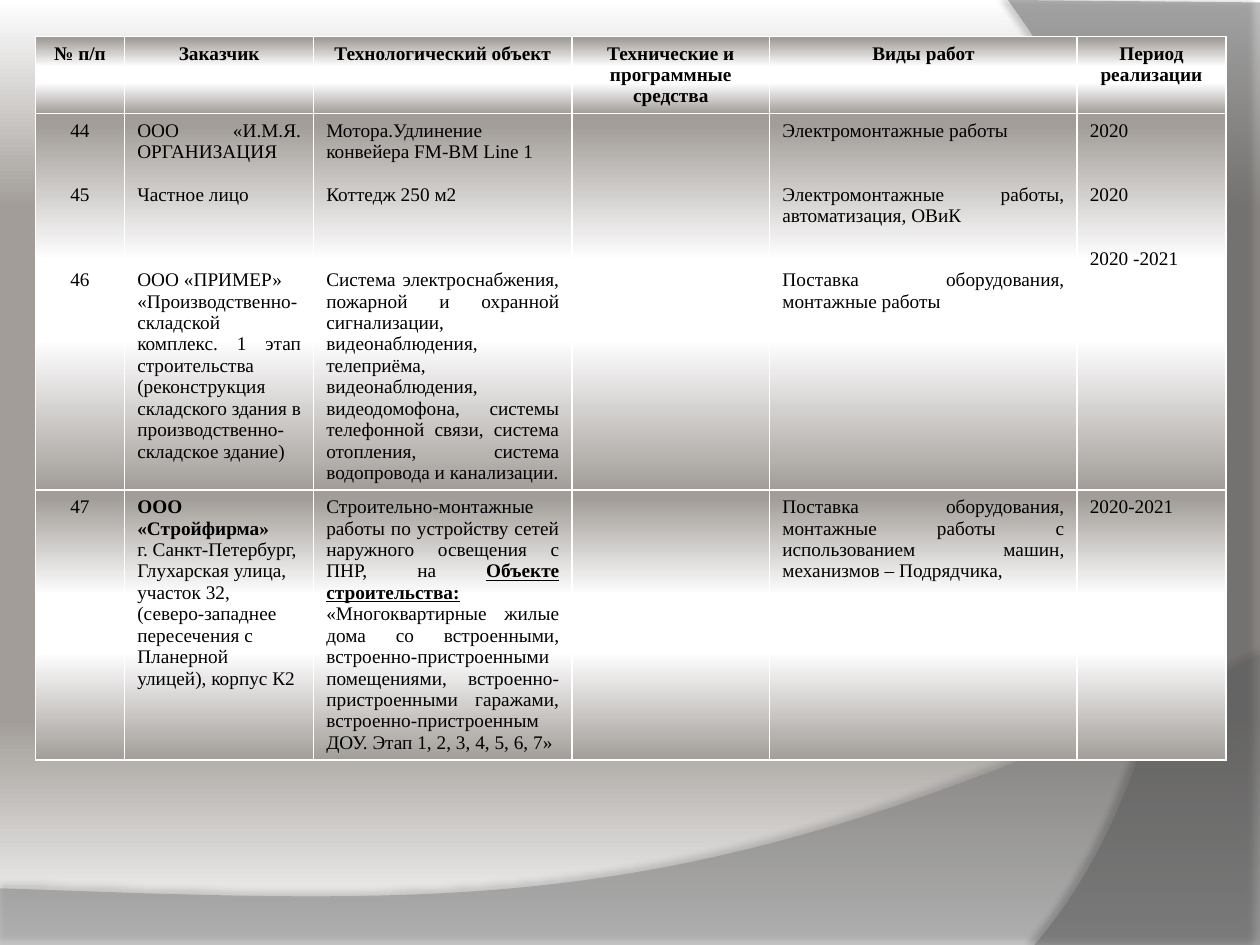
import pptx
import pptx.dml.color
import pptx.enum.text
import pptx.oxml
import pptx.oxml.ns
import pptx.util
from pptx.util import Inches

COLORS = {"white": "FFFFFF", "stone": "A29D99", "text": "000000",
          "wave": "7F7F7F", "side": "5E5E5E", "shadow": "000000"}
FONT = "Times New Roman"
TEXT_SIZE = 11
LINE_HEIGHT = 12.2
CENTER = pptx.enum.text.PP_ALIGN.CENTER
JUSTIFY = pptx.enum.text.PP_ALIGN.JUSTIFY
LEFT = pptx.enum.text.PP_ALIGN.LEFT

BACKGROUND_STOPS = [(0, "white"), (22, "stone"), (76, "stone"), (100, "white")]
CELL_STOPS = [(3, "stone"), (39, "white"), (60, "white"), (100, "stone")]

COLUMNS = [0.71, 1.5, 2.05, 1.57, 2.44, 1.18]
ROWS = [0.57, 2.96, 1.56]
HEADERS = ["№ п/п", "Заказчик", "Технологический объект",
           "Технические и программные средства", "Виды работ", "Период реализации"]

# Each cell is a list of paragraphs: (lines of space above, runs as (text, style)).
PROJECTS_44_46 = [
    [(0, [("44", "")]), (2, [("45", "")]), (3, [("46", "")])],
    [(0, [("ООО «И.М.Я. ОРГАНИЗАЦИЯ", "")]),
     (1, [("Частное лицо", "")]),
     (3, [("ООО «ПРИМЕР»", "")]),
     (0, [("«Производственно-складской комплекс. 1 этап строительства (реконструкция "
           "складского здания в производственно-складское здание)", "")])],
    [(0, [("Мотора.Удлинение конвейера FM-BM Line 1", "")]),
     (1, [("Коттедж 250 м2", "")]),
     (3, [("Система электроснабжения, пожарной и охранной сигнализации, видеонаблюдения, "
           "телеприёма, видеонаблюдения, видеодомофона, системы телефонной связи, система "
           "отопления, система водопровода и канализации.", "")])],
    [],
    [(0, [("Электромонтажные работы", "")]),
     (2, [("Электромонтажные работы, автоматизация, ОВиК", "")]),
     (2, [("Поставка оборудования, монтажные работы", "")])],
    [(0, [("2020", "")]), (2, [("2020", "")]), (2, [("2020 -2021", "")])],
]
PROJECT_47 = [
    [(0, [("47", "")])],
    [(0, [("ООО «Стройфирма»", "b")]),
     (0, [("г. Санкт-Петербург, Глухарская улица, участок 32, (северо-западнее "
           "пересечения с Планерной улицей), корпус К2", "")])],
    [(0, [("Строительно-монтажные работы по устройству сетей наружного освещения с ПНР, на ", ""),
          ("Объекте строительства:", "bu"),
          (" «Многоквартирные жилые дома со встроенными, встроенно-пристроенными "
           "помещениями, встроенно-пристроенными гаражами, встроенно-пристроенным ДОУ. "
           "Этап 1, 2, 3, 4, 5, 6, 7»", "")])],
    [],
    [(0, [("Поставка оборудования, монтажные работы с использованием машин, "
           "механизмов – Подрядчика,", "")])],
    [(0, [("2020-2021", "")])],
]


def rgb(name):
    return pptx.dml.color.RGBColor.from_string(COLORS[name])


def parse_drawing(xml):
    namespace = pptx.oxml.ns.nsdecls("a")
    return pptx.oxml.parse_xml(xml.replace(">", f" {namespace}>", 1))


def fill_gradient(fill, owner, stops):
    """Fill from top to bottom; owner is the XML element that holds the fill."""
    fill.gradient()
    fill.gradient_angle = 270
    stop_list = owner.find(".//" + pptx.oxml.ns.qn("a:gsLst"))
    for stop in list(stop_list):
        stop_list.remove(stop)
    for position, color in stops:
        stop_list.append(parse_drawing(
            f'<a:gs pos="{position * 1000}"><a:srgbClr val="{COLORS[color]}"/></a:gs>'))


def curve_points(start, control1, control2, end, steps=40):
    """Points along a cubic curve, without its start."""
    for step in range(1, steps + 1):
        t = step / steps
        weights = ((1 - t) ** 3, 3 * t * (1 - t) ** 2, 3 * t ** 2 * (1 - t), t ** 3)
        yield tuple(sum(w * p[axis] for w, p in zip(weights, (start, control1, control2, end)))
                    for axis in (0, 1))


def add_swoosh(slide, left, top, corners, curve, color, alpha, shadow):
    """Straight corners, then a curve from the last corner; points are inches from left, top."""
    points = [(Inches(left + x), Inches(top + y))
              for x, y in [*corners, *curve_points(corners[-1], *curve)]]
    builder = slide.shapes.build_freeform(*points[0], scale=1.0)
    builder.add_line_segments(points[1:], close=True)
    swoosh = builder.convert_to_shape()
    swoosh.line.fill.background()
    swoosh.fill.solid()
    swoosh.fill.fore_color.rgb = rgb(color)
    properties = swoosh._element.spPr
    properties.find(".//" + pptx.oxml.ns.qn("a:srgbClr")).append(
        parse_drawing(f'<a:alpha val="{alpha * 1000}"></a:alpha>'))
    swoosh.shadow.inherit = False
    opacity, distance, direction = shadow
    properties.find(pptx.oxml.ns.qn("a:effectLst")).append(parse_drawing(
        f'<a:outerShdw blurRad="{pptx.util.Pt(4)}" dist="{pptx.util.Pt(distance)}" '
        f'dir="{direction * 60000}" algn="tl" rotWithShape="0">'
        f'<a:srgbClr val="{COLORS["shadow"]}"><a:alpha val="{opacity * 1000}"/></a:srgbClr>'
        f'</a:outerShdw>'))


def style_cell(cell):
    properties = cell._tc.get_or_add_tcPr()
    for side in ("lnL", "lnR", "lnT", "lnB"):
        properties.append(parse_drawing(
            f'<a:{side} w="{pptx.util.Pt(1)}"><a:solidFill>'
            f'<a:srgbClr val="{COLORS["white"]}"/></a:solidFill></a:{side}>'))
    fill_gradient(cell.fill, properties, CELL_STOPS)


def write_cell(cell, paragraphs, alignment):
    for index, (gap, runs) in enumerate(paragraphs):
        frame = cell.text_frame
        paragraph = frame.add_paragraph() if index else frame.paragraphs[0]
        paragraph.alignment = alignment
        if gap:
            paragraph.space_before = pptx.util.Pt(round(gap * LINE_HEIGHT, 1))
        for text, style in runs:
            run = paragraph.add_run()
            run.text = text
            run.font.name = FONT
            run.font.size = pptx.util.Pt(TEXT_SIZE)
            run.font.color.rgb = rgb("text")
            run.font.bold = "b" in style
            run.font.underline = "u" in style


def add_projects_table(slide, left, top):
    header = [[(0, [(title, "b")])] for title in HEADERS]
    body_alignment = [CENTER] + [JUSTIFY] * 5
    content = [
        (header, [CENTER] * 6),
        (PROJECTS_44_46, body_alignment),
        (PROJECT_47, [CENTER, LEFT] + [JUSTIFY] * 4),
    ]
    table = slide.shapes.add_table(
        len(ROWS), len(COLUMNS), Inches(left), Inches(top),
        Inches(sum(COLUMNS)), Inches(sum(ROWS))).table
    for column, width in zip(table.columns, COLUMNS):
        column.width = Inches(width)
    for row, height, (cells, alignments) in zip(table.rows, ROWS, content):
        row.height = Inches(height)
        for cell, paragraphs, alignment in zip(row.cells, cells, alignments):
            style_cell(cell)
            write_cell(cell, paragraphs, alignment)


def main():
    presentation = pptx.Presentation()
    presentation.slide_width, presentation.slide_height = Inches(10), Inches(7.5)
    slide = presentation.slides.add_slide(presentation.slide_layouts[6])
    fill_gradient(slide.background.fill, slide._element, BACKGROUND_STOPS)
    add_swoosh(slide, 0, 5.2, [(0, 1.85), (0, 2.3), (10, 2.3), (10, 0)],
               [(5.59, 2.09), (3.91, 1.99), (0, 1.85)], "wave", 45, (35, 3.5, 270))
    add_swoosh(slide, 8, 0, [(0, 0), (2, 0.02), (2, 7.5), (0.21, 7.5)],
               [(1.35, 6.19), (2.18, 3), (0, 0)], "side", 40, (45, 4, 180))
    add_projects_table(slide, 0.28, 0.29)
    presentation.save("out.pptx")


if __name__ == "__main__":
    main()
